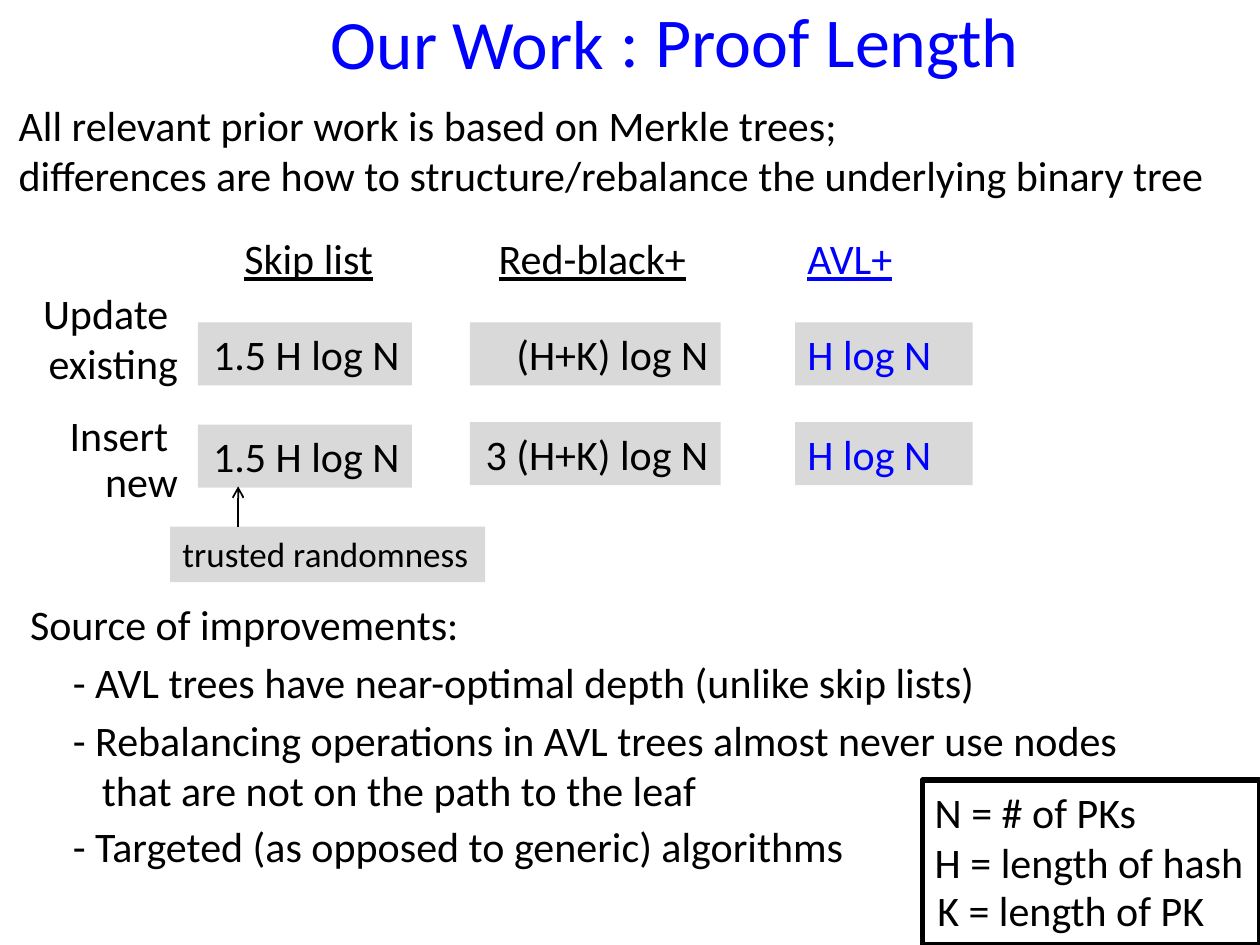
from pptx import Presentation
from pptx.dml.color import RGBColor
from pptx.enum.shapes import MSO_CONNECTOR, MSO_SHAPE
from pptx.enum.text import MSO_ANCHOR, MSO_AUTO_SIZE, PP_ALIGN
from pptx.oxml.ns import qn
from pptx.util import Inches, Pt
from lxml.etree import SubElement

BLACK = RGBColor(0x00, 0x00, 0x00)
BLUE = RGBColor(0x00, 0x00, 0xFF)
GRAY = RGBColor(0xD9, 0xD9, 0xD9)
FONT = "Calibri"
ROW_HEIGHT = 0.5


def write_text(shape, paragraphs, size=24, color=BLACK, align=PP_ALIGN.LEFT,
               underline=None, wrap=True, spacing=None, hanging=0):
    frame = shape.text_frame
    frame.word_wrap = wrap
    frame.auto_size = MSO_AUTO_SIZE.SHAPE_TO_FIT_TEXT
    frame.vertical_anchor = MSO_ANCHOR.TOP
    for index, lines in enumerate(paragraphs):
        paragraph = frame.paragraphs[0] if index == 0 else frame.add_paragraph()
        paragraph.alignment = align
        paragraph.line_spacing = spacing
        if hanging:
            properties = paragraph._p.get_or_add_pPr()
            properties.set("marL", str(Inches(hanging)))
            properties.set("indent", str(-Inches(hanging)))
        for number, line in enumerate(lines.split("\n")):
            if number:
                paragraph.add_line_break()
            run = paragraph.add_run()
            run.text = line
            run.font.name = FONT
            run.font.size = Pt(size)
            run.font.color.rgb = color
            run.font.underline = underline


def add_text(slide, box, text, **style):
    shape = slide.shapes.add_textbox(*map(Inches, box))
    write_text(shape, [text], **style)
    return shape


def add_panel(slide, box, paragraphs, fill=None, line=None, **style):
    shape = slide.shapes.add_shape(MSO_SHAPE.RECTANGLE, *map(Inches, box))
    shape.shadow.inherit = False
    if fill is None:
        shape.fill.background()
    else:
        shape.fill.solid()
        shape.fill.fore_color.rgb = fill
    if line is None:
        shape.line.fill.background()
    else:
        shape.line.color.rgb = line
        shape.line.width = Pt(3)
    write_text(shape, paragraphs, **style)


def add_title(slide, left, top):
    title = add_text(slide, (left, top, 6.9, 0.66), "Our Work", size=39.6,
                     color=BLUE, align=PP_ALIGN.CENTER)
    title.text_frame.auto_size = MSO_AUTO_SIZE.NONE
    title.text_frame.vertical_anchor = MSO_ANCHOR.MIDDLE
    add_text(slide, (left + 4.57, top - 0.07, 3.41, 0.77), ": Proof Length",
             size=40, color=BLUE, wrap=False)


def add_column(slide, left, top, width, heading, heading_box, cells, offsets,
               color, align):
    heading_left, heading_width = heading_box
    add_text(slide, (heading_left, top, heading_width, ROW_HEIGHT), heading,
             color=color, underline=True)
    for text, offset in zip(cells, offsets):
        add_panel(slide, (left, top + offset, width, ROW_HEIGHT), [text],
                  fill=GRAY, color=color, align=align)


def add_comparison(slide, left, top):
    add_text(slide, (left, top + 0.43, 1.78, 0.91), "Update \nexisting",
             align=PP_ALIGN.RIGHT)
    add_text(slide, (left, top + 1.45, 1.78, 0.83), "Insert \nnew",
             align=PP_ALIGN.RIGHT, spacing=0.9)
    columns = [
        (1.57, 1.7, "Skip list", (1.84, 1.29),
         ("1.5 H log N", "1.5 H log N"), (0.76, 1.57), BLACK, PP_ALIGN.RIGHT),
        (3.73, 1.99, "Red-black+", (3.86, 1.73),
         ("(H+K) log N", "3 (H+K) log N"), (0.76, 1.55), BLACK, PP_ALIGN.RIGHT),
        (6.31, 1.41, "AVL+", (6.31, 1.41),
         ("H log N", "H log N"), (0.76, 1.55), BLUE, PP_ALIGN.LEFT),
    ]
    for column_left, *column in columns:
        add_column(slide, column_left, top, *column)


def add_randomness_note(slide, left, top):
    add_panel(slide, (left, top, 2.5, 0.44), ["trusted randomness"],
              fill=GRAY, size=20, wrap=False)
    arrow_x = Inches(left + 0.54)
    arrow = slide.shapes.add_connector(
        MSO_CONNECTOR.STRAIGHT, arrow_x, Inches(top - 0.32), arrow_x, Inches(top))
    arrow.line.color.rgb = BLACK
    arrow.line.width = Pt(1)
    SubElement(arrow.line._get_or_add_ln(), qn("a:headEnd"), type="arrow")
    SubElement(arrow._element.spPr, qn("a:effectLst"))


def add_improvements(slide, left, top):
    add_text(slide, (left, top, 4.17, 0.5), "Source of improvements:")
    reasons = [
        (0.46, 7.93, 0.5, "- AVL trees have near-optimal depth (unlike skip lists)"),
        (0.92, 9.27, 0.91, "- Rebalancing operations in AVL trees almost never use nodes \n"
                           "that are not on the path to the leaf"),
        (1.76, 9.27, 0.5, "- Targeted (as opposed to generic) algorithms"),
    ]
    for offset, width, height, text in reasons:
        add_text(slide, (left + 0.34, top + offset, width, height), text,
                 hanging=0.23)


def add_legend(slide, left, top):
    add_panel(slide, (left, top, 2.68, 1.31),
              ["N = # of PKs", "H = length of hash"], line=BLACK, wrap=False)
    add_text(slide, (left + 0.02, top + 0.78, 2.35, 0.5), "K = length of PK",
             wrap=False)


def main():
    presentation = Presentation()
    presentation.slide_width = Inches(10)
    presentation.slide_height = Inches(7.5)
    slide = presentation.slides.add_slide(presentation.slide_layouts[6])
    add_title(slide, 0.26, 0)
    add_text(slide, (0.05, 0.74, 10.9, 0.91),
             "All relevant prior work is based on Merkle trees; \n"
             "differences are how to structure/rebalance the underlying binary tree")
    add_comparison(slide, -0.27, 1.8)
    add_randomness_note(slide, 1.35, 4.18)
    add_improvements(slide, 0.14, 4.7)
    add_legend(slide, 7.32, 6.19)
    presentation.save("out.pptx")


if __name__ == "__main__":
    main()
